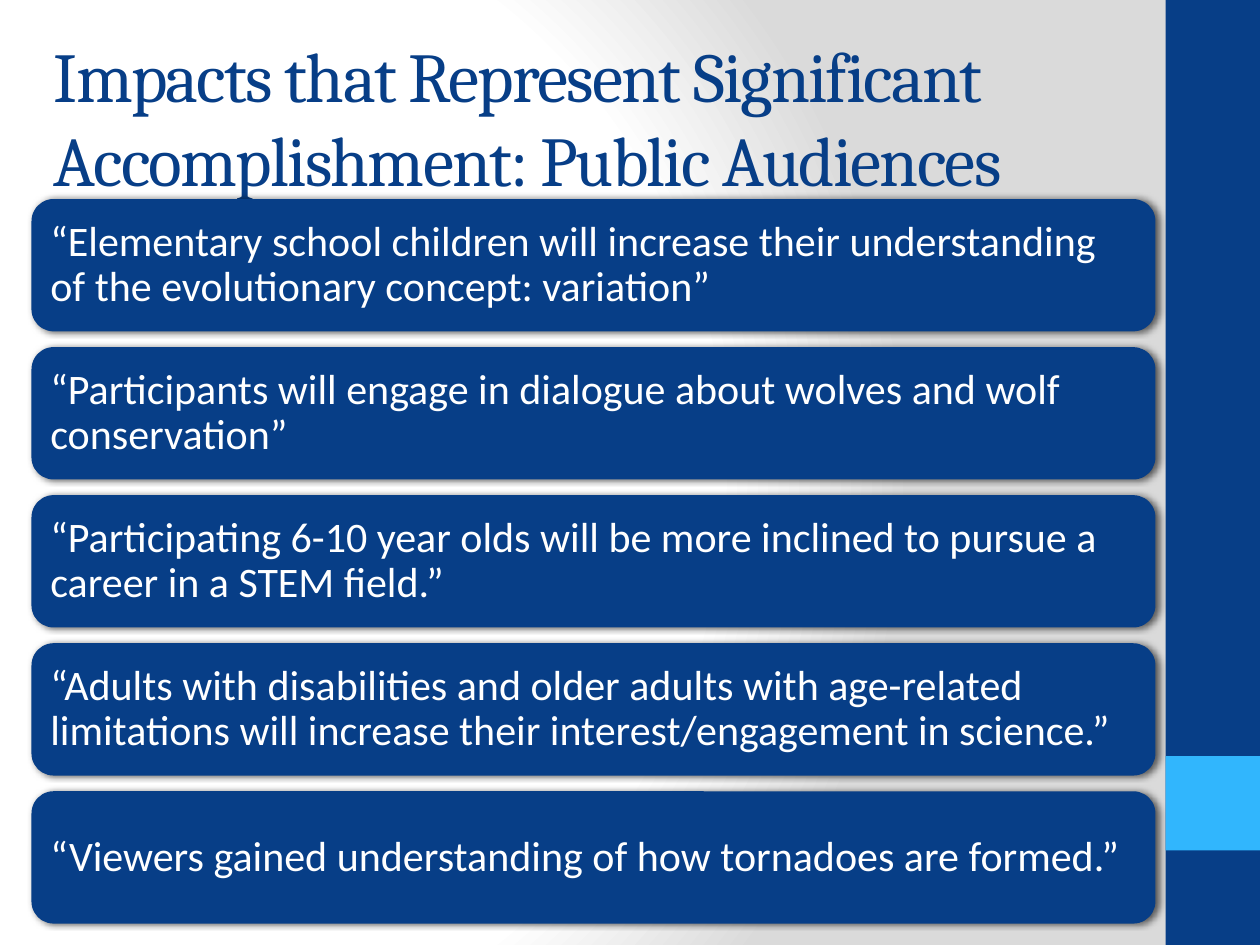
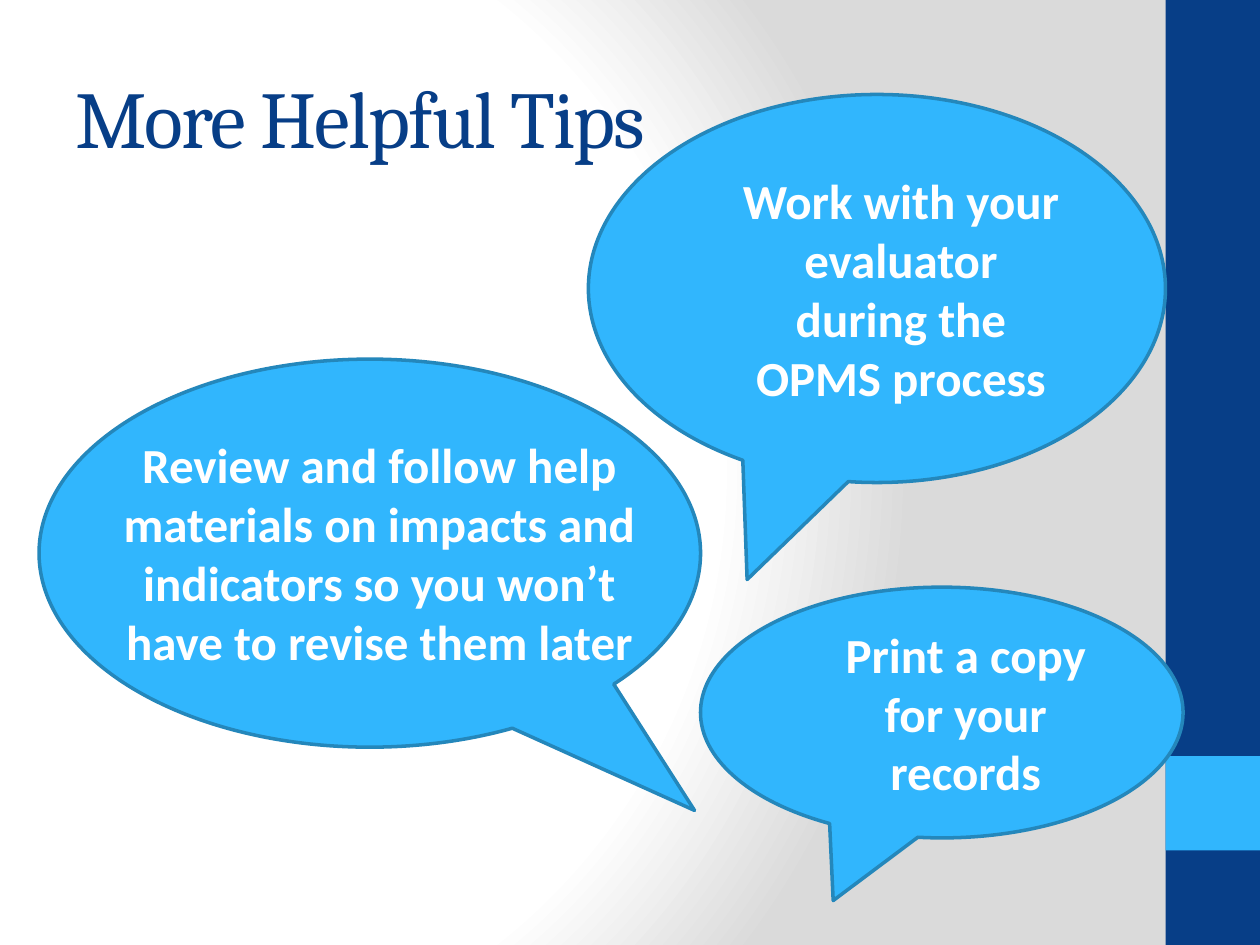
import dataclasses

import lxml.etree
import pptx
import pptx.dml.color
import pptx.enum.shapes
import pptx.enum.text
import pptx.oxml
import pptx.oxml.ns
import pptx.util

Inches = pptx.util.Inches
SHAPE = pptx.enum.shapes.MSO_SHAPE
ALIGN = pptx.enum.text.PP_ALIGN
ANCHOR = pptx.enum.text.MSO_ANCHOR


@dataclasses.dataclass(frozen=True)
class Theme:
    """Colours, fonts and type sizes shared by the slides."""

    navy: str = "073E87"
    sky: str = "31B6FD"
    outline: str = "2487BB"
    white: str = "FFFFFF"
    grey: str = "DADADA"
    shadow: str = "000000"
    heading_font: str = "Cambria"
    body_font: str = "Calibri"
    long_title: int = 40
    short_title: int = 46
    impact: int = 24
    tip: int = 28


THEME = Theme()

IMPACTS = [
    "“Elementary school children will increase their understanding of the evolutionary concept: variation”",
    "“Participants will engage in dialogue about wolves and wolf conservation”",
    "“Participating 6-10 year olds will be more inclined to pursue a career in a STEM field.”",
    "“Adults with disabilities and older adults with age-related limitations will increase their interest/engagement in science.”",
    "“Viewers gained understanding of how tornadoes are formed.”",
]


def rgb(colour):
    """Turn a hex string into a colour."""
    return pptx.dml.color.RGBColor.from_string(colour)


def drawing_xml(markup):
    """Parse DrawingML whose root element lacks its namespace declaration."""
    head, rest = markup.split(">", 1)
    return pptx.oxml.parse_xml(f"{head} {pptx.oxml.ns.nsdecls('a')}>{rest}")


def add_filled(slide, preset, box, fill, line=None):
    """Add a flat preset shape, outlined only when a line colour is given."""
    shape = slide.shapes.add_shape(preset, *map(Inches, box))
    shape.shadow.inherit = False
    shape.fill.solid()
    shape.fill.fore_color.rgb = rgb(fill)
    if line:
        shape.line.color.rgb = rgb(line)
        shape.line.width = pptx.util.Pt(2)
    else:
        shape.line.fill.background()
    return shape


def write(shape, text, font, size, colour, align=ALIGN.LEFT, bold=False, anchor=ANCHOR.MIDDLE):
    """Write one wrapped paragraph into a shape and return it."""
    frame = shape.text_frame
    frame.word_wrap = True
    frame.vertical_anchor = anchor
    paragraph = frame.paragraphs[0]
    paragraph.text = text
    paragraph.alignment = align
    paragraph.font.name = font
    paragraph.font.size = pptx.util.Pt(size)
    paragraph.font.bold = bold
    paragraph.font.color.rgb = rgb(colour)
    return paragraph


def add_background(slide):
    """Fill the background with the white to grey radial gradient."""
    slide.background.fill.gradient()
    gradient = slide.element.find(f".//{pptx.oxml.ns.qn('a:gradFill')}")
    stops = "".join(
        f'<a:gs pos="{percent * 1000}"><a:srgbClr val="{colour}"/></a:gs>'
        for percent, colour in [(0, THEME.white), (75, THEME.white), (100, THEME.grey)]
    )
    radial = drawing_xml(
        f'<a:gradFill rotWithShape="1"><a:gsLst>{stops}</a:gsLst><a:path path="circle">'
        '<a:fillToRect l="20000" t="50000" r="100000" b="50000"/></a:path></a:gradFill>'
    )
    gradient.getparent().replace(gradient, radial)


def add_side_band(slide, box):
    """Draw the navy band with its square sky-blue accent."""
    left, top, width, height = box
    add_filled(slide, SHAPE.RECTANGLE, box, THEME.navy)
    add_filled(slide, SHAPE.RECTANGLE, (left, top + 0.8 * height, width, width), THEME.sky)


def add_title(slide, text, box, size):
    """Set the slide title with tightened letter spacing."""
    title = slide.shapes.add_textbox(*map(Inches, box))
    write(title, text, THEME.heading_font, size, THEME.navy)
    title.text_frame.paragraphs[0].runs[0].font._element.set("spc", "-100")


def start_slide(deck, title, title_box, title_size):
    """Add a slide with the shared background, band and title."""
    slide = deck.slides.add_slide(deck.slide_layouts[6])
    add_background(slide)
    add_side_band(slide, (9.25, 0, 0.75, 7.5))
    add_title(slide, title, title_box, title_size)
    return slide


def add_impact_card(slide, text, box):
    """Draw one rounded card with a soft shadow and its quotation."""
    card = add_filled(slide, SHAPE.ROUNDED_RECTANGLE, box, THEME.navy)
    effects = card.element.spPr.find(pptx.oxml.ns.qn("a:effectLst"))
    effects.append(drawing_xml(
        '<a:outerShdw blurRad="50800" dist="25400" dir="0" rotWithShape="0">'
        f'<a:srgbClr val="{THEME.shadow}"><a:alpha val="60000"/></a:srgbClr></a:outerShdw>'
    ))
    quotation = write(card, text, THEME.body_font, THEME.impact, THEME.white)
    quotation.line_spacing = 0.9


def add_impact_stack(slide, impacts, box, card_height=1.05):
    """Spread the cards evenly down the box."""
    left, top, width, height = box
    pitch = (height - card_height) / (len(impacts) - 1)
    for row, impact in enumerate(impacts):
        add_impact_card(slide, impact, (left, top + row * pitch, width, card_height))


def add_bubble(slide, box, tail):
    """Draw a speech bubble whose tail is offset from its centre."""
    bubble = add_filled(slide, SHAPE.OVAL_CALLOUT, box, THEME.sky, THEME.outline)
    bubble.adjustments[0], bubble.adjustments[1] = tail
    return bubble


def write_tip(shape, text, anchor=ANCHOR.MIDDLE):
    """Write a centred bold tip."""
    return write(shape, text, THEME.body_font, THEME.tip, THEME.white, ALIGN.CENTER, True, anchor)


def add_indented_tip(slide, text, box):
    """Draw a bubble with a lower-left tail and an indented tip."""
    tip = write_tip(add_bubble(slide, box, (-0.225, 0.75)), text)
    tip._p.get_or_add_pPr().set("marL", str(Inches(0.38)))


def add_review_tip(slide, text, box):
    """Draw a bubble with a lower-right tail and a wide text box over it."""
    left, top, _, _ = box
    add_bubble(slide, box, (0.491, 0.663))
    label = slide.shapes.add_textbox(*map(Inches, (left + 0.45, top + 0.55, 4.5, 1.99)))
    write_tip(label, text, ANCHOR.TOP)


def build_impacts_slide(deck):
    """Build the slide of public audience impacts."""
    slide = start_slide(
        deck, "Impacts that Represent Significant Accomplishment: Public Audiences",
        (0.33, 0.3, 8.5, 1.25), THEME.long_title,
    )
    add_impact_stack(slide, IMPACTS, (0.25, 1.58, 8.92, 5.75))


def build_tips_slide(deck):
    """Build the slide of tips in speech bubbles."""
    slide = start_slide(deck, "More Helpful Tips", (0.5, 0.3, 8.33, 1.25), THEME.short_title)
    add_indented_tip(slide, "Work with your evaluator during the OPMS process", (4.67, 0.75, 4.58, 3.08))
    add_review_tip(
        slide, "Review and follow help materials on impacts and indicators so you won’t have to revise them later",
        (0.31, 2.85, 5.25, 3.08),
    )
    add_indented_tip(slide, "Print a copy for your records", (5.56, 4.66, 3.83, 1.99))


def main():
    """Build and save the deck."""
    deck = pptx.Presentation()
    deck.slide_width, deck.slide_height = Inches(10), Inches(7.5)
    build_impacts_slide(deck)
    build_tips_slide(deck)
    deck.save("out.pptx")


if __name__ == "__main__":
    main()
